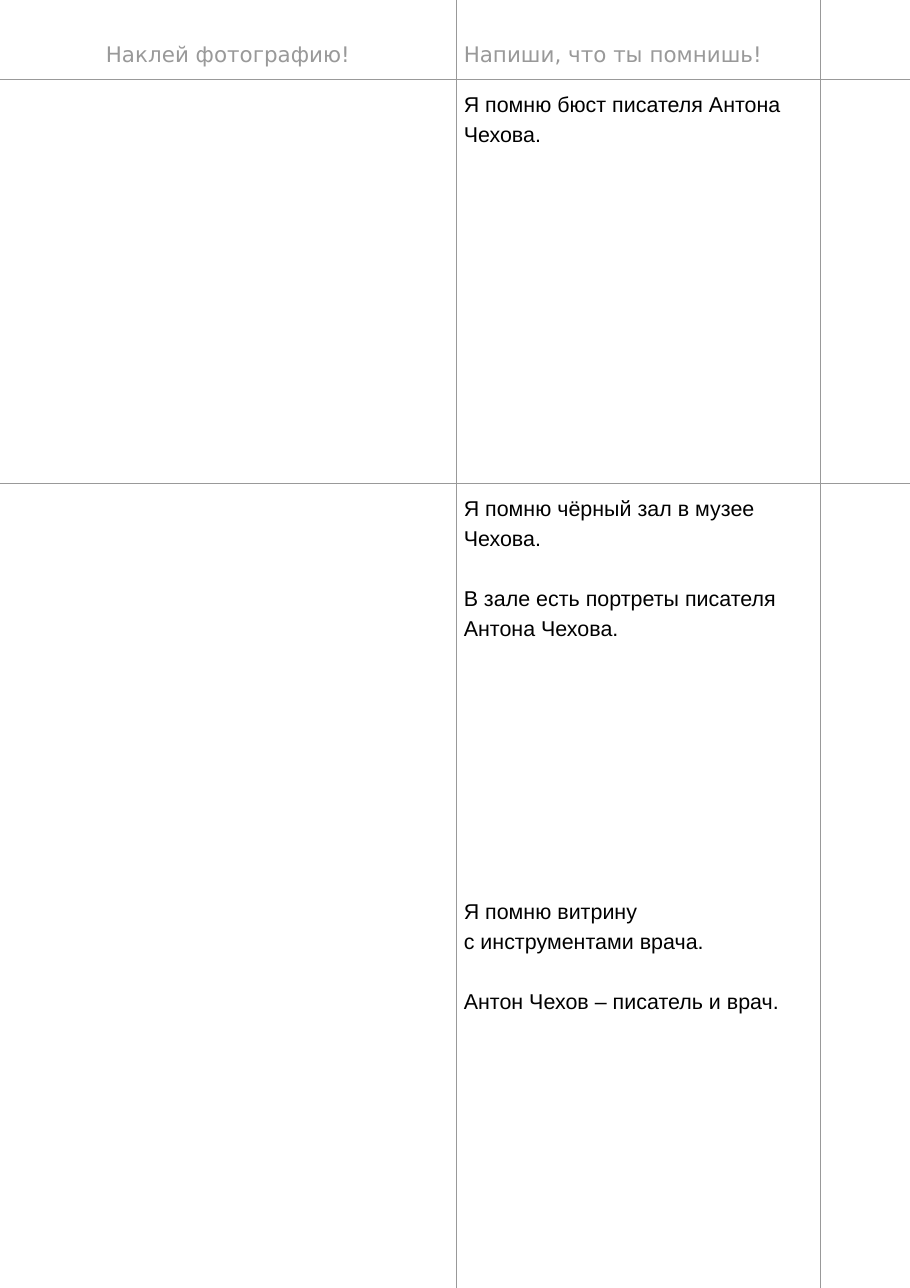
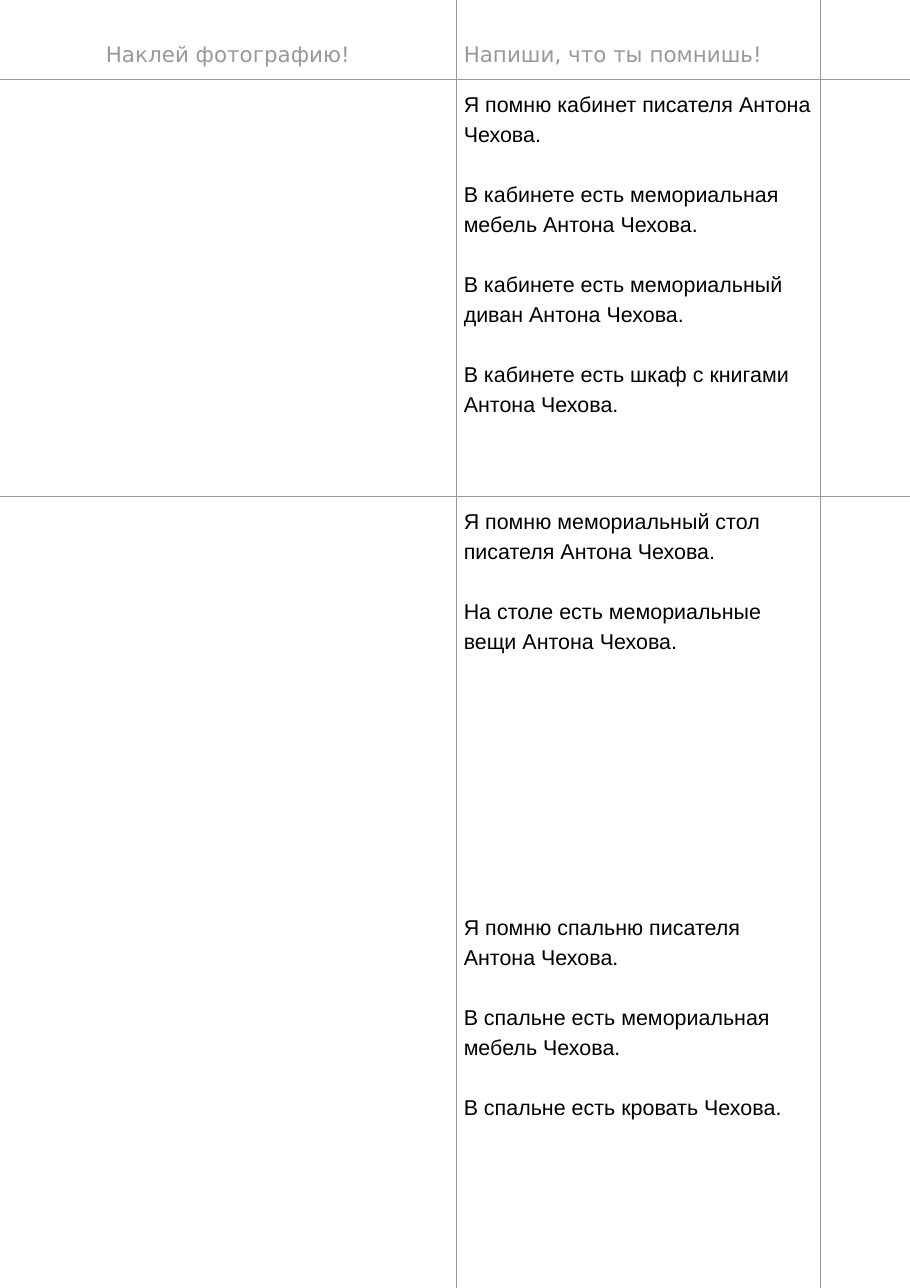
from lxml.etree import SubElement
from pptx import Presentation
from pptx.dml.color import RGBColor
from pptx.enum.text import PP_ALIGN
from pptx.oxml.ns import qn
from pptx.util import Inches, Pt

GREY, BLACK, WHITE = "999999", "000000", "FFFFFF"
PAGE_WIDTH, PAGE_HEIGHT = 8.26, 11.69
COLUMNS = [4.14, 3.31, 0.82]
LINE_WIDTH = 0.53
LINE_HEIGHT = 19.6
MARGIN = 0.07
HEADER_MARGIN = 0.34
HEADER_FONT = {"name": "DejaVu Sans", "size": Pt(14)}
BODY_FONT = {"name": "Arial", "size": Pt(14)}
HEADERS = ["Наклей фотографию!", "Напиши, что ты помнишь!"]
PAGES = [
    {
        "rows": [0.72, 3.67, 3.66, 3.66],
        "memories": [
            ["Я помню бюст писателя Антона Чехова."],
            ["Я помню чёрный зал в музее Чехова.",
             "В зале есть портреты писателя Антона Чехова."],
            ["Я помню витрину\vс инструментами врача.",
             "Антон Чехов ‒ писатель и врач."],
        ],
    },
    {
        "rows": [0.72, 3.79, 3.68, 3.5],
        "memories": [
            ["Я помню кабинет писателя Антона Чехова.",
             "В кабинете есть мемориальная мебель Антона Чехова.",
             "В кабинете есть мемориальный диван Антона Чехова.",
             "В кабинете есть шкаф с книгами Антона Чехова."],
            ["Я помню мемориальный стол писателя Антона Чехова.",
             "На столе есть мемориальные вещи Антона Чехова."],
            ["Я помню спальню писателя Антона Чехова.",
             "В спальне есть мемориальная мебель Чехова.",
             "В спальне есть кровать Чехова."],
        ],
    },
]


def set_colour(target, value):
    """Give a fill or a font a solid colour from a hex string."""
    if hasattr(target, "solid"):
        target.solid()
        target.fore_color.rgb = RGBColor.from_string(value)
    else:
        target.color.rgb = RGBColor.from_string(value)


def set_borders(cell, visible):
    """Draw the named sides of a cell and hide the other sides."""
    properties = cell._tc.get_or_add_tcPr()
    for side in "LRTB":
        line = SubElement(properties, qn(f"a:ln{side}"), w=str(Pt(LINE_WIDTH)))
        if side in visible:
            fill = SubElement(line, qn("a:solidFill"))
            SubElement(fill, qn("a:srgbClr"), val=GREY)
        else:
            SubElement(line, qn("a:noFill"))


def write_cell(cell, texts, font, colour, align=PP_ALIGN.LEFT):
    """Write paragraphs one empty line apart."""
    frame = cell.text_frame
    for index, text in enumerate(texts):
        para = frame.add_paragraph() if index else frame.paragraphs[0]
        para.text = text
        layout = {
            "alignment": align,
            "line_spacing": Pt(LINE_HEIGHT),
            "space_before": Pt(LINE_HEIGHT if index else 0),
        }
        for name, value in layout.items():
            setattr(para, name, value)
        for span in para.runs:
            for name, value in font.items():
                setattr(span.font, name, value)
            set_colour(span.font, colour)


def format_cell(cell, row, column):
    """Set the margins, borders and fill that follow from a cell's place."""
    margins = {
        "margin_left": MARGIN,
        "margin_right": MARGIN,
        "margin_top": MARGIN if row else HEADER_MARGIN,
        "margin_bottom": MARGIN,
    }
    for name, value in margins.items():
        setattr(cell, name, Inches(value))
    sides = "R" + ("L" if column else "")
    sides += "T" if row in (1, 2) else ""
    sides += "B" if row in (0, 1) else ""
    set_borders(cell, sides)
    set_colour(cell.fill, WHITE)


def add_album_table(page, left, top, rows, memories):
    """Add the table with photo space on the left and memories beside it."""
    box = page.shapes.add_table(
        len(rows), len(COLUMNS), Inches(left), Inches(top),
        Inches(sum(COLUMNS)), Inches(sum(rows)))
    table = box.table
    table.first_row = table.horz_banding = False
    for column, width in zip(table.columns, COLUMNS):
        column.width = Inches(width)
    for row, height in zip(table.rows, rows):
        row.height = Inches(height)
    for row in range(len(rows)):
        for column in range(len(COLUMNS)):
            format_cell(table.cell(row, column), row, column)
    for column, (text, align) in enumerate(
            zip(HEADERS, (PP_ALIGN.CENTER, PP_ALIGN.LEFT))):
        write_cell(table.cell(0, column), [text], HEADER_FONT, GREY, align)
    for row, texts in enumerate(memories, start=1):
        write_cell(table.cell(row, 1), texts, BODY_FONT, BLACK)


def main():
    """Build the album pages and save the deck."""
    deck = Presentation()
    deck.slide_width = Inches(PAGE_WIDTH)
    deck.slide_height = Inches(PAGE_HEIGHT)
    for content in PAGES:
        page = deck.slides.add_slide(deck.slide_layouts[6])
        add_album_table(page, 0, 0, **content)
    deck.save("out.pptx")


if __name__ == "__main__":
    main()
